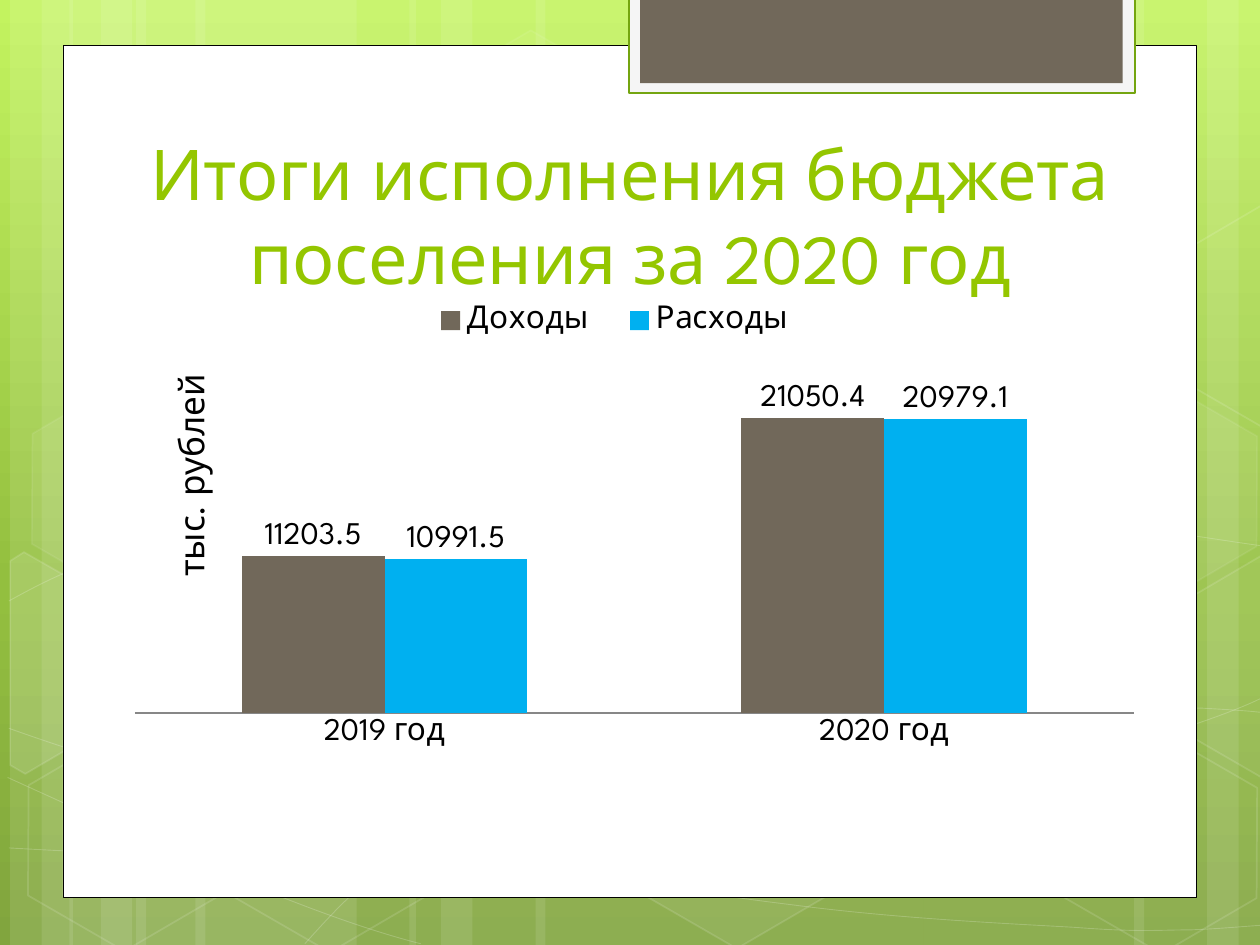
from copy import deepcopy
from dataclasses import dataclass
from math import cos, radians, sin

from lxml import etree
from pptx import Presentation
from pptx.chart.data import CategoryChartData
from pptx.dml.color import RGBColor
from pptx.enum import chart as charts, shapes, text
from pptx.oxml import parse_xml
from pptx.oxml.ns import nsdecls, qn
from pptx.util import Inches, Pt

FONT = "League Spartan"
WHITE, BLACK, TAUPE, GREEN, BLUE = "FFFFFF", "000000", "71685A", "94C600", "00B0F0"
Point = tuple[float, float]


@dataclass
class Box:
    x: float
    y: float
    w: float
    h: float
    rot: float = 0

    def emu(self):
        return [Inches(v) for v in (self.x, self.y, self.w, self.h)]


@dataclass
class Style:
    fill: str | None = None
    fill_alpha: int = 100
    line: str | None = None
    width: float = 1
    line_alpha: int = 100


@dataclass
class Hexagon:
    x: float
    y: float
    fill_alpha: int
    line_alpha: int


@dataclass
class CutHexagon:
    center: Point
    fill_alpha: int
    corners: list[Point]


@dataclass
class Wave:
    knots: list[Point]
    straight: int = -1


@dataclass
class Label:
    box: Box
    words: str
    size: float
    color: str
    align: text.PP_ALIGN
    anchor: text.MSO_ANCHOR
    fit: text.MSO_AUTO_SIZE


def rgb(value: str) -> RGBColor:
    return RGBColor.from_string(value)


def paint(fill, color: str | None, alpha: int, parent) -> None:
    if color is None or alpha == 0:
        fill.background()
        return
    fill.solid()
    fill.fore_color.rgb = rgb(color)
    if alpha < 100:
        node = parent.find(qn("a:solidFill")).find(qn("a:srgbClr"))
        etree.SubElement(node, qn("a:alpha")).set("val", str(alpha * 1000))


def apply_style(sp, style: Style) -> None:
    sp.shadow.inherit = False
    props = sp.element.find(qn("p:spPr"))
    paint(sp.fill, style.fill, style.fill_alpha, props)
    if style.line:
        sp.line.width = Pt(style.width)
    paint(sp.line.fill, style.line, style.line_alpha, props.find(qn("a:ln")))


def add_preset(s, kind, box: Box, style: Style):
    sp = s.shapes.add_shape(kind, *box.emu())
    sp.rotation = box.rot
    apply_style(sp, style)
    return sp


def add_outline(s, points: list[Point], style: Style, close: bool):
    emu = [(Inches(x), Inches(y)) for x, y in points]
    builder = s.shapes.build_freeform(*emu[0])
    builder.add_line_segments(emu[1:], close=close)
    sp = builder.convert_to_shape()
    apply_style(sp, style)
    return sp


def add_wave(s, wave: Wave) -> None:
    sp = add_outline(s, wave.knots, Style(line=WHITE, width=0.5, line_alpha=20), False)
    lines = list(sp.element.iter(qn("a:lnTo")))
    i = 0
    while i < len(lines):
        if i == wave.straight:
            i += 1
            continue
        curve = etree.Element(qn("a:cubicBezTo"))
        lines[i].addprevious(curve)
        for line in lines[i:i + 3]:
            curve.append(line[0])
            line.getparent().remove(line)
        i += 3


def add_cut_hexagon(s, h: CutHexagon) -> None:
    (cx, cy), c, k = h.center, cos(radians(30)), sin(radians(30))
    upright = [(cx + c * (x - cx) + k * (y - cy), cy - k * (x - cx) + c * (y - cy)) for x, y in h.corners]
    add_outline(s, upright, Style(WHITE, h.fill_alpha, WHITE, 1, 12), True).rotation = 30


def add_label(s, label: Label) -> None:
    sp = s.shapes.add_textbox(*label.box.emu())
    sp.rotation = label.box.rot
    tf = sp.text_frame
    tf.word_wrap, tf.auto_size, tf.vertical_anchor = True, label.fit, label.anchor
    p = tf.paragraphs[0]
    p.alignment = label.align
    r = p.add_run()
    r.text = label.words
    r.font.name, r.font.size = FONT, Pt(label.size)
    r.font.color.rgb = rgb(label.color)


def add_background(s) -> None:
    fill = s.background.fill
    fill.gradient()
    fill.gradient_angle = 270
    stop_list = s.element.find(".//" + qn("a:gsLst"))
    stop_list.append(deepcopy(stop_list[0]))
    for stop, (position, color) in zip(fill.gradient_stops, [(0, "C3F35F"), (0.62, "93BF3F"), (1, "81A53E")]):
        stop.position = position
        stop.color.rgb = rgb(color)


def place(parent, index: int, part: Box, whole: Box, target: str = "") -> None:
    for old in parent.findall(qn("c:layout")):
        parent.remove(old)
    shares = dict(x=part.x / whole.w, y=part.y / whole.h, w=part.w / whole.w, h=part.h / whole.h)
    sizes = "".join(f'<c:{name} val="{share}"/>' for name, share in shares.items())
    parent.insert(index, parse_xml(
        f'<c:layout {nsdecls("c")}><c:manualLayout>{target}'
        f'<c:xMode val="edge"/><c:yMode val="edge"/>{sizes}</c:manualLayout></c:layout>'))


def add_budget_chart(s, box: Box) -> None:
    data = CategoryChartData()
    data.categories = ["2019 год", "2020 год"]
    data.add_series("Доходы", (11203.5, 21050.4))
    data.add_series("Расходы", (10991.5, 20979.1))
    chart = s.shapes.add_chart(charts.XL_CHART_TYPE.COLUMN_CLUSTERED, *box.emu(), data).chart
    chart.has_title = False
    chart.font.name, chart.font.size = FONT, Pt(18)
    chart.font.color.rgb = rgb(BLACK)
    chart.has_legend = True
    chart.legend.position = charts.XL_LEGEND_POSITION.TOP
    chart.legend.include_in_layout = False
    chart.category_axis.major_tick_mark = charts.XL_TICK_MARK.NONE
    axis = chart.value_axis
    axis.visible = axis.has_major_gridlines = False
    plot = chart.plots[0]
    plot.gap_width, plot.overlap, plot.vary_by_categories = 150, 0, False
    for series, color in zip(plot.series, (TAUPE, BLUE)):
        series.format.fill.solid()
        series.format.fill.fore_color.rgb = rgb(color)
        series.data_labels.show_value = True
        series.data_labels.position = charts.XL_LABEL_POSITION.OUTSIDE_END
    place(chart.element.find(".//" + qn("c:plotArea")), 0, Box(0.16, 0.63, 7.93, 2.78), box,
          '<c:layoutTarget val="inner"/>')
    place(chart.element.find(".//" + qn("c:legend")), 1, Box(2.35, 0.1, 3.24, 0.39), box)


STRIPES = [(1.08, 1.75, 0), (0.08, 0.5, 0), (0.33, 0.83, 0), (1.55, 1.75, 0), (0.55, 0.5, 0), (0.8, 0.83, 0),
           (7.33, 1.75, 180), (9.58, 0.5, 180), (9, 0.83, 180), (4.25, 3.08, 0), (3.25, 0.5, 0), (3.5, 0.83, 0)]
WAVES = [
    Wave([(0.07, 6.73), (0.61, 6.76), (1.15, 6.79), (1.9, 6.78), (2.65, 6.77), (3.58, 6.75), (4.58, 6.65),
          (5.58, 6.55), (7, 6.36), (7.92, 6.17), (8.83, 5.98), (9.77, 5.68), (10.07, 5.51)]),
    Wave([(0.07, 4.77), (0.36, 4.61), (0.65, 4.46), (1.21, 4.31), (1.78, 4.16), (2.59, 3.94), (3.47, 3.87),
          (4.36, 3.8), (5.44, 3.79), (6.54, 3.87), (7.64, 3.95), (9.47, 4.26), (10.07, 4.34)]),
    Wave([(0.06, 6.17), (1.27, 6.72), (2.47, 7.27), (3.34, 7.49)]),
    Wave([(0.07, 5.78), (0.38, 5.89), (0.7, 6), (1.28, 6.16), (1.86, 6.31), (2.73, 6.56), (3.57, 6.73),
          (4.4, 6.9), (5.45, 7.08), (6.28, 7.18), (7.11, 7.29), (8, 7.33), (8.53, 7.36),
          (9.05, 7.4), (9.19, 7.38), (9.45, 7.38), (9.71, 7.37), (9.89, 7.35), (10.07, 7.34)]),
    Wave([(2.42, 7.49), (2.6, 7.29), (2.78, 7.09), (3.02, 6.91), (3.26, 6.73), (3.6, 6.53), (3.88, 6.39),
          (4.16, 6.25), (4.33, 6.19), (4.7, 6.09), (5.06, 5.99), (5.73, 5.85), (6.08, 5.78),
          (6.44, 5.71), (6.49, 5.71), (6.8, 5.69), (7.11, 5.66), (7.6, 5.63), (7.94, 5.62),
          (8.29, 5.61), (8.86, 5.62), (8.86, 5.62), (9.53, 5.62), (9.71, 5.63), (9.88, 5.64), (9.97, 5.65),
          (10.06, 5.66), (10.03, 5.65), (10.06, 5.66)], 21),
]
HEXAGONS = [Hexagon(3.34, 0.36, 4, 8), Hexagon(4.97, 5.89, 6, 12), Hexagon(0.11, 5.91, 0, 12),
            Hexagon(0.14, 3.12, 7, 8), Hexagon(1.74, 5.92, 0, 12), Hexagon(7.53, 4.53, 10, 12),
            Hexagon(8.34, 5.93, 0, 12), Hexagon(8.34, 3.14, 7, 8)]
CUT_HEXAGONS = [
    CutHexagon((0.36, 5.35), 10, [(0.08, 4.45), (0.19, 4.38), (0.96, 4.82), (0.95, 5.7), (0.2, 6.14), (0.08, 6.07)]),
    CutHexagon((9.85, 5.2), 4, [(9.26, 4.85), (10.01, 4.41), (10.09, 4.46), (10.09, 6.13), (10.02, 6.17), (9.26, 5.73)]),
    CutHexagon((9.85, 2.41), 0, [(9.26, 2.07), (10.01, 1.63), (10.1, 1.68), (10.09, 3.35), (10.02, 3.39), (9.26, 2.95)]),
]
PANELS = [(Box(0.5, 0.36, 9, 6.76), Style(WHITE, line=BLACK, width=0.5)),
          (Box(4.99, -0.02, 4.02, 0.76), Style("F5F5F5", line="74A510", width=1.25)),
          (Box(5.08, -0.02, 3.83, 0.68), Style(TAUPE))]
TITLE = Label(Box(0.51, 0.92, 8.98, 1.5), "Итоги исполнения бюджета поселения за 2020 год", 40, GREEN,
              text.PP_ALIGN.CENTER, text.MSO_ANCHOR.BOTTOM, text.MSO_AUTO_SIZE.NONE)
UNITS = Label(Box(0.53, 3.47, 1.97, 0.44, 270), "тыс. рублей", 20, BLACK,
              text.PP_ALIGN.LEFT, text.MSO_ANCHOR.TOP, text.MSO_AUTO_SIZE.SHAPE_TO_FIT_TEXT)


def main() -> None:
    prs = Presentation()
    prs.slide_width, prs.slide_height = Inches(10), Inches(7.5)
    s = prs.slides.add_slide(prs.slide_layouts[6])
    add_background(s)
    for x, w, rot in STRIPES:
        add_preset(s, shapes.MSO_SHAPE.RECTANGLE, Box(x, 0, w, 7.5, rot), Style(WHITE, 10))
    for wave in WAVES:
        add_wave(s, wave)
    for h in HEXAGONS:
        style = Style(WHITE, h.fill_alpha, WHITE, 1, h.line_alpha)
        sp = add_preset(s, shapes.MSO_SHAPE.HEXAGON, Box(h.x, h.y, 1.75, 1.52, 30), style)
        sp.adjustments[0] = 0.285
    for cut in CUT_HEXAGONS:
        add_cut_hexagon(s, cut)
    for box, style in PANELS:
        add_preset(s, shapes.MSO_SHAPE.RECTANGLE, box, style)
    add_label(s, TITLE)
    add_budget_chart(s, Box(0.91, 2.25, 8.23, 3.91))
    add_label(s, UNITS)
    prs.save("out.pptx")


if __name__ == "__main__":
    main()
